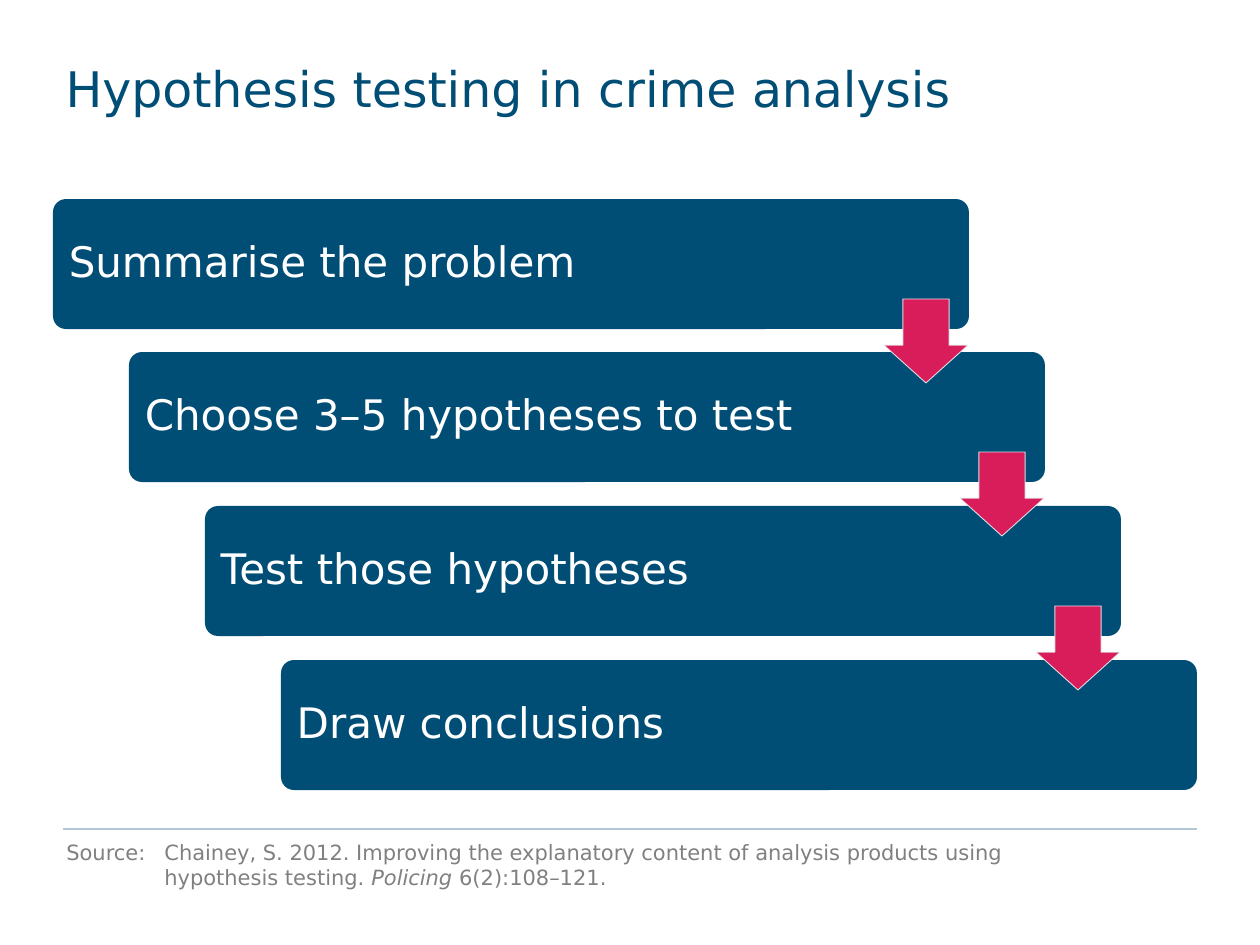
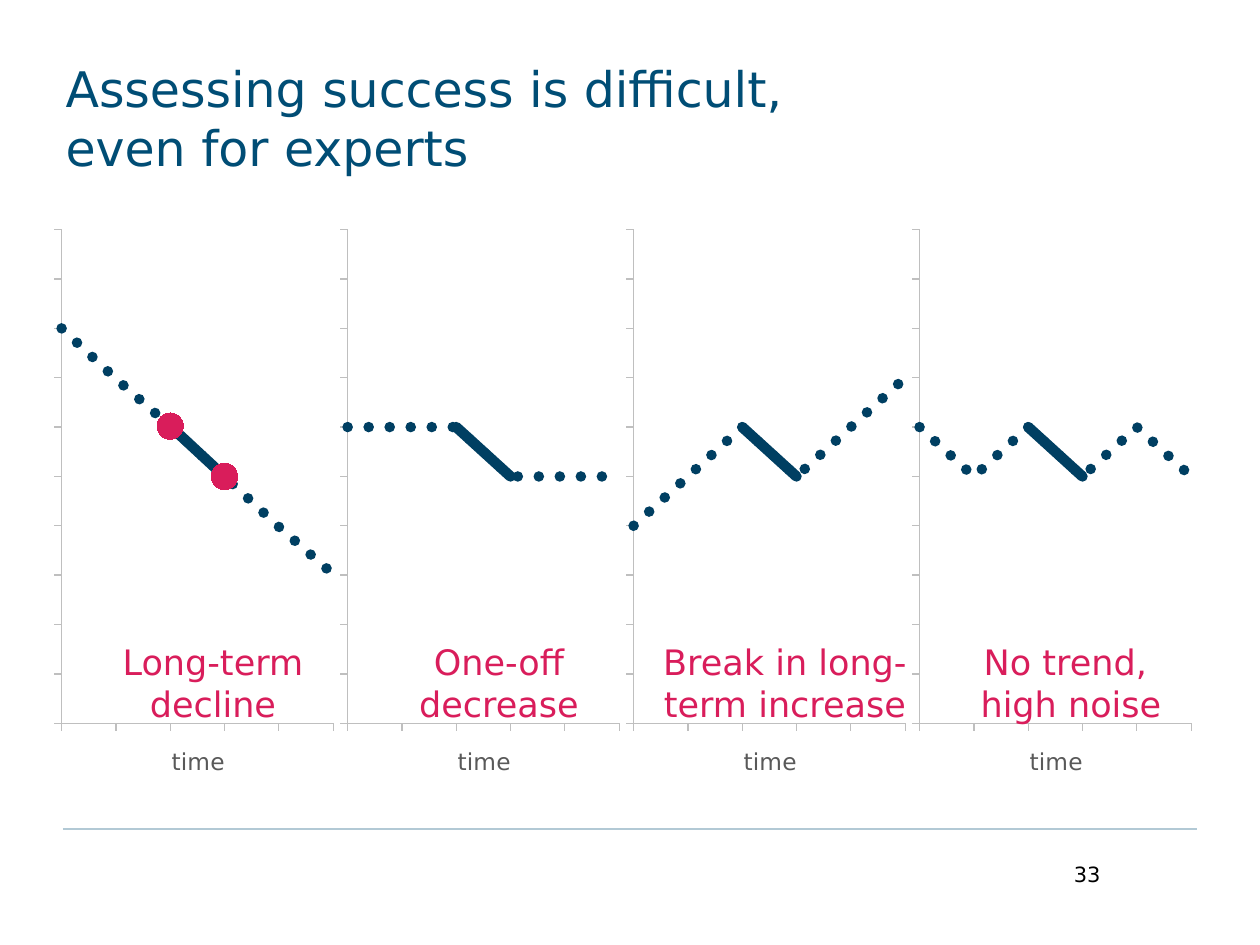
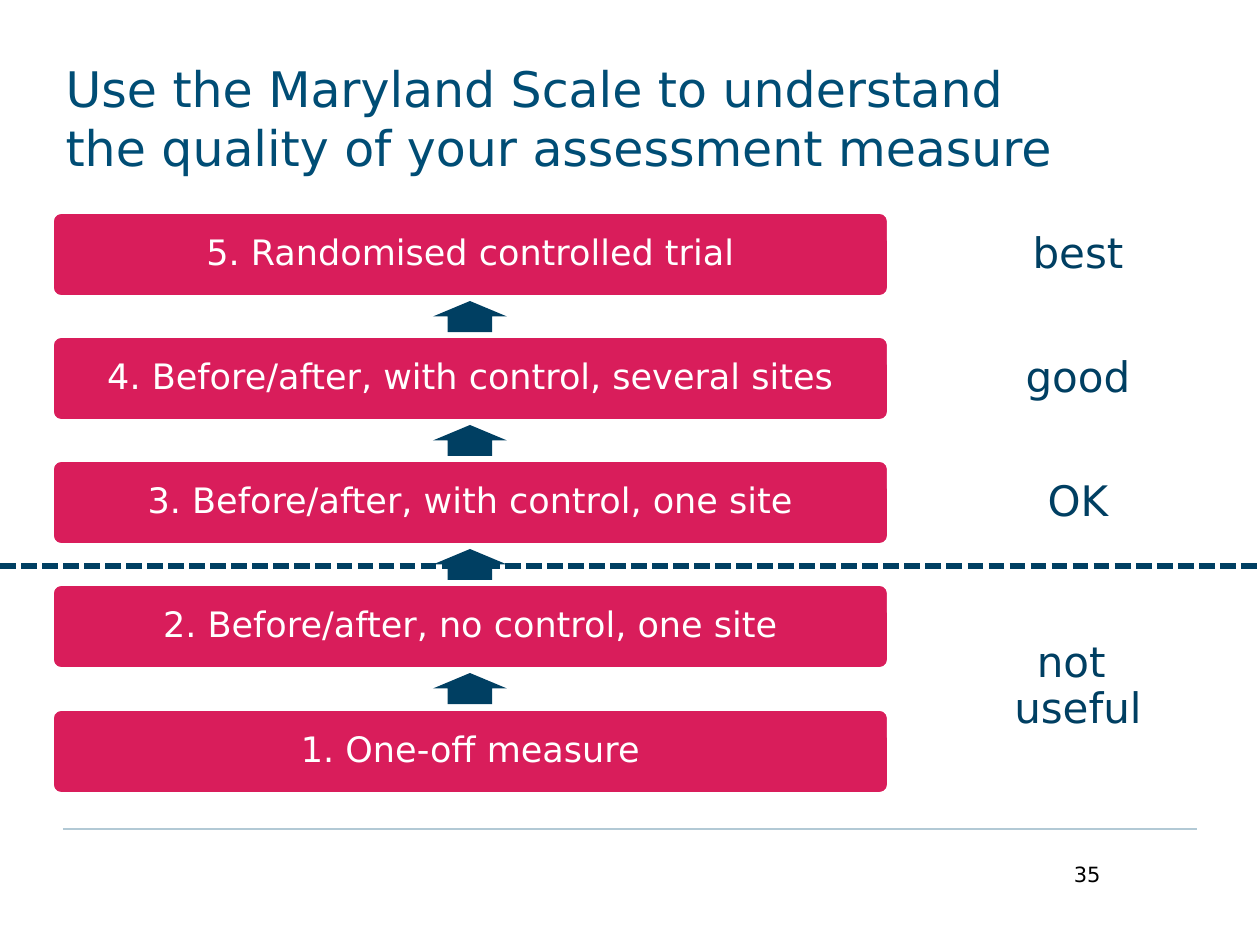
from dataclasses import dataclass

from lxml.etree import SubElement
from pptx import Presentation
from pptx.chart.data import XyChartData
from pptx.dml.color import RGBColor
from pptx.enum.chart import (XL_AXIS_CROSSES, XL_CHART_TYPE, XL_MARKER_STYLE,
                             XL_TICK_LABEL_POSITION, XL_TICK_MARK)
from pptx.enum.dml import MSO_LINE
from pptx.enum.shapes import MSO_CONNECTOR, MSO_SHAPE
from pptx.enum.text import MSO_ANCHOR, MSO_AUTO_SIZE, PP_ALIGN
from pptx.oxml.ns import qn
from pptx.util import Pt

PX = 914400 // 126


@dataclass(frozen=True)
class Theme:
    font: str = "DejaVu Sans"
    blue: RGBColor = RGBColor(0x00, 0x4D, 0x75)
    navy: RGBColor = RGBColor(0x00, 0x3F, 0x62)
    pink: RGBColor = RGBColor(0xD9, 0x1D, 0x5B)
    pale: RGBColor = RGBColor(0xB2, 0xC9, 0xD5)
    ice: RGBColor = RGBColor(0xE7, 0xF3, 0xF4)
    white: RGBColor = RGBColor(0xFF, 0xFF, 0xFF)
    black: RGBColor = RGBColor(0x00, 0x00, 0x00)
    gray: RGBColor = RGBColor(0x80, 0x80, 0x80)
    axis_text: RGBColor = RGBColor(0x59, 0x59, 0x59)
    axis_line: RGBColor = RGBColor(0xBF, 0xBF, 0xBF)
    title: int = 28
    large: int = 24
    medium: int = 20
    axis_title: float = 13.3
    small: int = 12


theme = Theme()


def write(shape, text, size, color, align=PP_ALIGN.LEFT, anchor=MSO_ANCHOR.MIDDLE, spacing=None):
    """Fill a shape with one styled paragraph and return that paragraph."""
    frame = shape.text_frame
    frame.word_wrap = True
    frame.auto_size = MSO_AUTO_SIZE.NONE
    frame.vertical_anchor = anchor
    frame.text = text
    para = frame.paragraphs[0]
    para.alignment = align
    para.line_spacing = spacing
    para.font.name = theme.font
    para.font.size = Pt(size)
    para.font.color.rgb = color
    return para


def add_block(page, kind, box, fill=None, adjustments=()):
    """Add a flat, unlined preset shape, see-through when it has no fill."""
    block = page.shapes.add_shape(kind, *(PX * length for length in box))
    for index, value in enumerate(adjustments):
        block.adjustments[index] = value
    block.shadow.inherit = False
    block.line.fill.background()
    if fill is None:
        block.fill.background()
    else:
        block.fill.solid()
        block.fill.fore_color.rgb = fill
    return block


deck = Presentation()
deck.slide_width, deck.slide_height = PX * 1260, PX * 945

# Titles, rules and page numbers
footer_rule = (63, 1197, 829, theme.pale, 1.25, MSO_LINE.SOLID)
useful_limit = (0, 1260, 566, theme.navy, 3, MSO_LINE.SQUARE_DOT)
frames = [
    ("Hypothesis testing in crime analysis", None, [footer_rule]),
    ("Assessing success is difficult, \veven for experts", "33", [footer_rule]),
    ("Use the Maryland Scale to understand \vthe quality of your assessment measure",
     "35", [footer_rule, useful_limit]),
]
pages = []
for title, number, rules in frames:
    page = deck.slides.add_slide(deck.slide_layouts[5])
    heading = page.shapes.title
    heading.left, heading.top, heading.width, heading.height = PX * 53, PX * 52, PX * 1144, PX * 147
    write(heading, title, theme.title, theme.blue, anchor=MSO_ANCHOR.TOP)
    for start, end, y, color, weight, dash in rules:
        rule = page.shapes.add_connector(MSO_CONNECTOR.STRAIGHT, PX * start, PX * y, PX * end, PX * y)
        rule.line.color.rgb = color
        rule.line.width = Pt(weight)
        rule.line.dash_style = dash
        SubElement(rule._element.spPr, qn("a:effectLst"))
    if number:
        box = page.shapes.add_textbox(PX * 819, PX * 855, PX * 294, PX * 66)
        write(box, number, theme.small, theme.black, PP_ALIGN.RIGHT, MSO_ANCHOR.TOP)
    pages.append(page)
process_page, trend_page, scale_page = pages

# Hypothesis testing: a staircase of stages joined by arrows
stages = ["Summarise the problem", "Choose 3–5 hypotheses to test",
          "Test those hypotheses", "Draw conclusions"]
corners = [(53 + 76 * index, 199 + 461 * index // 3) for index in range(len(stages))]
for stage, (left, top) in zip(stages, corners):
    bar = add_block(process_page, MSO_SHAPE.ROUNDED_RECTANGLE, (left, top, 916, 130),
                    theme.blue, [0.1])
    write(bar, stage, theme.large, theme.white, spacing=0.9)
    bar.text_frame.margin_left = PX * 12
for left, top in corners[:-1]:
    arrow = add_block(process_page, MSO_SHAPE.DOWN_ARROW, (left + 831, top + 100, 84, 84),
                      theme.pink, [0.55, 0.45])
    arrow.line.color.rgb = theme.ice
    arrow.line.width = Pt(0.5)
    line_color = arrow._element.spPr.find(".//" + qn("a:ln")).find(".//" + qn("a:srgbClr"))
    SubElement(line_color, qn("a:alpha"), val="90000")

source = process_page.shapes.add_textbox(PX * 54, PX * 833, PX * 1022, PX * 79)
para = write(source, "Source:\tChainey, S. 2012. Improving the explanatory content of analysis "
             "products using hypothesis testing. ", theme.small, theme.gray, anchor=MSO_ANCHOR.TOP)
hanging = para._p.get_or_add_pPr()
hanging.set("marL", str(PX * 98))
hanging.set("indent", str(-PX * 98))
for text, italic in [("Policing", True), (" 6(2):108–121.", False)]:
    span = para.add_run()
    span.text = text
    span.font.italic = italic

# Assessing success: the same drop within four trends
trends = [
    ("Long-term decline", 16.67, [100, 83, 67, 50, 33, 17], ["ends", "drop", "trend"]),
    ("One-off decrease", 25, [100, 100, 100, 75, 75, 75], ["trend", "drop"]),
    ("Break in long-term increase", 20, [40, 60, 80, 60, 80, 100], ["trend", "drop"]),
    ("No trend, \vhigh noise", 25, [100, 75, 100, 75, 100, 75], ["trend", "drop"]),
]
plot_layout = {"layoutTarget": "inner", "xMode": "edge", "yMode": "edge",
               "x": "0.03", "y": "0.02", "w": "0.95", "h": "0.85"}
title_layout = {"xMode": "edge", "yMode": "edge", "x": "0.4", "y": "0.9"}
for index, (label, step, values, roles) in enumerate(trends):
    data = XyChartData()
    for order, role in enumerate(roles, 1):
        points = data.add_series(f"Series {order}")
        for time, value in enumerate(values):
            points.add_data_point(time, value if role == "trend" or time in (2, 3) else None)
    kind = (XL_CHART_TYPE.XY_SCATTER if "ends" in roles
            else XL_CHART_TYPE.XY_SCATTER_LINES_NO_MARKERS)
    chart = trend_page.shapes.add_chart(
        kind, PX * (53 + 286 * index), PX * 218, PX * 286, PX * 581, data).chart
    chart.has_legend = False
    chart.has_title = False
    chart.font.name = theme.font
    chart.font.size = Pt(theme.small)
    chart.font.color.rgb = theme.axis_text

    time_axis, value_axis = chart.category_axis, chart.value_axis
    time_axis.minimum_scale, time_axis.maximum_scale, time_axis.major_unit = 0, 5, 1
    value_axis.minimum_scale = -2 * step
    value_axis.maximum_scale = 8 * step
    value_axis.major_unit = step
    value_axis.crosses = XL_AXIS_CROSSES.MINIMUM
    for axis in (time_axis, value_axis):
        axis.has_major_gridlines = False
        axis.major_tick_mark = XL_TICK_MARK.OUTSIDE
        axis.minor_tick_mark = XL_TICK_MARK.NONE
        axis.tick_label_position = XL_TICK_LABEL_POSITION.NONE
        axis.format.line.color.rgb = theme.axis_line
        axis.format.line.width = Pt(0.75)
    axis_title = time_axis.axis_title
    axis_title.text_frame.text = "time"
    font = axis_title.text_frame.paragraphs[0].font
    font.name, font.size, font.bold = theme.font, Pt(theme.axis_title), False
    font.color.rgb = theme.axis_text

    plot_area = chart._chartSpace.chart.plotArea
    for owner, settings in [(plot_area, plot_layout), (axis_title._element, title_layout)]:
        layout = owner.find(qn("c:layout"))
        if layout is None:
            layout = SubElement(owner, qn("c:layout"))
            owner.insert(0, layout)
        manual = SubElement(layout, qn("c:manualLayout"))
        for name, value in settings.items():
            SubElement(manual, qn(f"c:{name}"), val=value)

    for series, role in zip(chart.plots[0].series, roles):
        for point in list(series._element.iter(qn("c:pt"))):
            if point.find(qn("c:v")).text == "None":
                point.getparent().remove(point)
        series.smooth = False
        if role == "ends":
            series.format.line.fill.background()
            series.marker.style = XL_MARKER_STYLE.CIRCLE
            series.marker.size = 15
            series.marker.format.fill.solid()
            series.marker.format.fill.fore_color.rgb = theme.pink
            series.marker.format.line.color.rgb = theme.pink
            continue
        series.marker.style = XL_MARKER_STYLE.NONE
        series.format.line.color.rgb = theme.navy
        series.format.line.width = Pt(6)
        if role == "trend":
            series.format.line.dash_style = MSO_LINE.ROUND_DOT
        series._element.find(qn("c:spPr")).find(qn("a:ln")).set("cap", "rnd")

for index, (label, *_) in enumerate(trends):
    box = trend_page.shapes.add_textbox(PX * (70 + 286 * index), PX * 638, PX * 286, PX * 89)
    write(box, label, theme.medium, theme.pink, PP_ALIGN.CENTER)

# Maryland Scale: five levels, best at the top
levels = ["5. Randomised controlled trial", "4. Before/after, with control, several sites",
          "3. Before/after, with control, one site", "2. Before/after, no control, one site",
          "1. One-off measure"]
for index, level in enumerate(levels):
    top = 213 + 497 * index // 4
    bar = add_block(scale_page, MSO_SHAPE.ROUNDED_RECTANGLE, (53, top, 835, 83), theme.pink, [0.1])
    bar.line.color.rgb = theme.white
    bar.line.width = Pt(1)
    write(bar, level, theme.medium, theme.white, PP_ALIGN.CENTER, spacing=0.9)
    if index < len(levels) - 1:
        add_block(scale_page, MSO_SHAPE.UP_ARROW, (433, top + 88, 74, 31), theme.navy, [0.6, 0.5])

ratings = [("best", 213, 83), ("good", 337, 83), ("OK", 461, 83), ("not \vuseful", 581, 212)]
for rating, top, height in ratings:
    box = add_block(scale_page, MSO_SHAPE.RECTANGLE, (959, top, 238, height))
    write(box, rating, theme.large, theme.navy, PP_ALIGN.CENTER, spacing=0.9)

deck.save("out.pptx")
